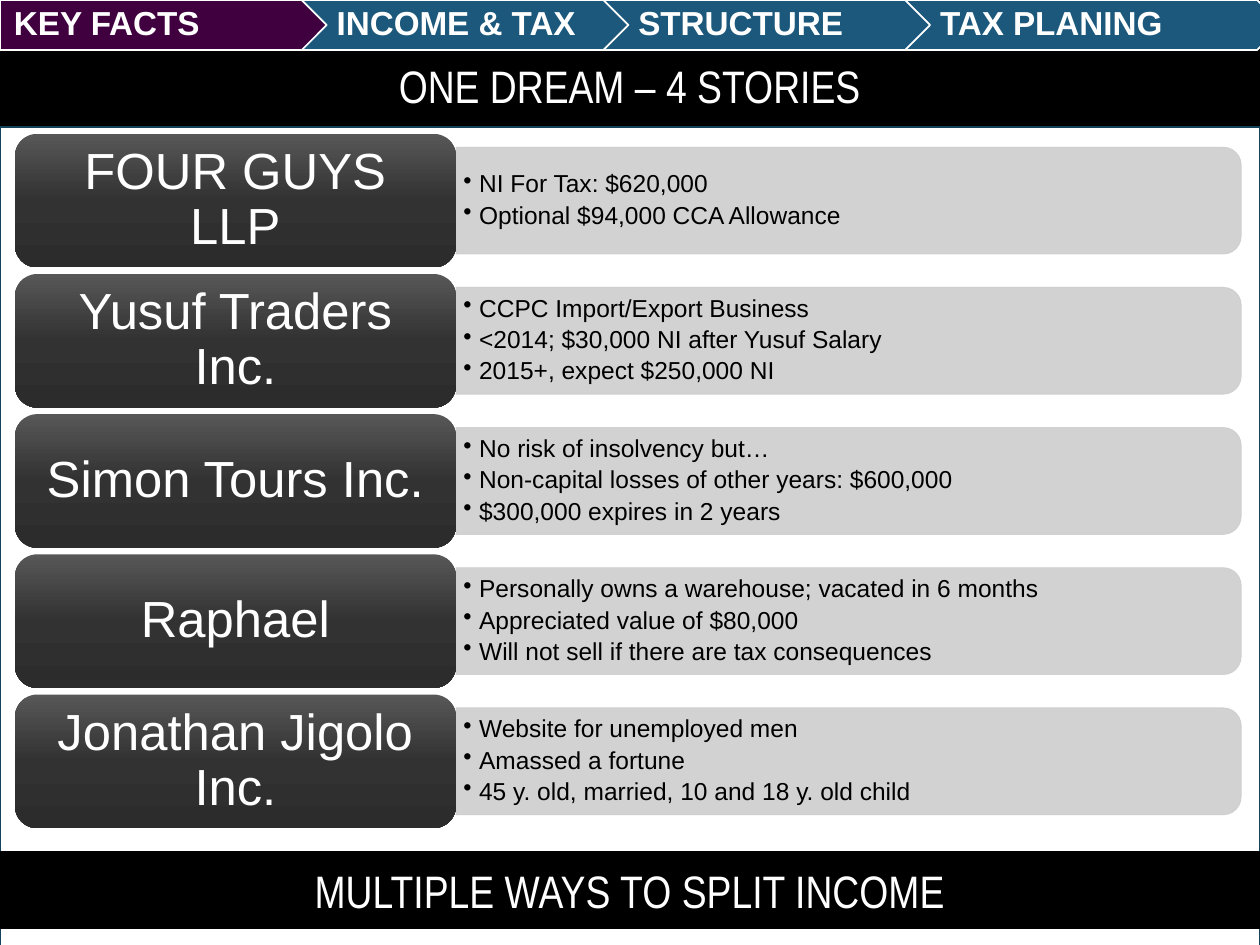
from lxml import etree
from pptx import Presentation
from pptx import util as u
from pptx.dml.color import RGBColor
from pptx.enum import shapes, text
from pptx.oxml.ns import qn

Pt = u.Pt
SHAPE = shapes.MSO_SHAPE
ALIGN = text.PP_ALIGN

WIDTH, HEIGHT = 720, 540
BLACK, WHITE = "000000", "FFFFFF"
PANEL_EDGE, BAR_GREY = "14415C", "CECECE"
NAV_ACTIVE, NAV_IDLE = "400040", "1B587C"
LABEL_GRADIENT = [(0, "575757"), (50, "323232"), (100, "2C2C2C")]

TABS = ["KEY FACTS", "INCOME & TAX", "STRUCTURE", "TAX PLANING"]
STORIES = [
    ("FOUR GUYS LLP",
     ["NI For Tax: $620,000", "Optional $94,000 CCA Allowance"]),
    ("Yusuf Traders Inc.",
     ["CCPC Import/Export Business", "<2014; $30,000 NI after Yusuf Salary",
      "2015+, expect $250,000 NI"]),
    ("Simon Tours Inc.",
     ["No risk of insolvency but…", "Non-capital losses of other years: $600,000",
      "$300,000 expires in 2 years"]),
    ("Raphael",
     ["Personally owns a warehouse; vacated in 6 months",
      "Appreciated value of $80,000", "Will not sell if there are tax consequences"]),
    ("Jonathan Jigolo Inc.",
     ["Website for unemployed men", "Amassed a fortune",
      "45 y. old, married, 10 and 18 y. old child"]),
]


def rgb(value):
    return RGBColor.from_string(value)


class SlideBuilder:
    body_font = "Arial"
    heading_font = "Arial Narrow"
    heading_size, label_size, tab_size, bullet_size = 26, 29, 19, 14

    def __init__(self, slide):
        self.slide = slide

    def put_text(self, shape, lines, size, color, font=None, align=ALIGN.LEFT,
                 bold=False, insets=(7.2, 3.6, 7.2, 3.6), spacing=0.9):
        frame = shape.text_frame
        frame.text = "\n".join(lines)
        frame.word_wrap = True
        frame.auto_size = text.MSO_AUTO_SIZE.NONE
        frame.vertical_anchor = text.MSO_ANCHOR.MIDDLE
        (frame.margin_left, frame.margin_top,
         frame.margin_right, frame.margin_bottom) = map(Pt, insets)
        for paragraph in frame.paragraphs:
            paragraph.alignment = align
            paragraph.line_spacing = spacing
            for run in paragraph.runs:
                run.font.size = Pt(size)
                run.font.name = font or self.body_font
                run.font.bold = bold
                run.font.color.rgb = rgb(color)

    def block(self, kind, left, top, width, height, fill=None, line=None, weight=1):
        shape = self.slide.shapes.add_shape(
            kind, Pt(left), Pt(top), Pt(width), Pt(height))
        shape.shadow.inherit = False
        if fill:
            shape.fill.solid()
            shape.fill.fore_color.rgb = rgb(fill)
        if line:
            shape.line.color.rgb = rgb(line)
            shape.line.width = Pt(weight)
        else:
            shape.line.fill.background()
        return shape

    def title(self, wording, left, top, width, height):
        title = self.slide.shapes.title
        title.left, title.top = Pt(left), Pt(top)
        title.width, title.height = Pt(width), Pt(height)
        self.put_text(title, [wording], self.heading_size, WHITE,
                      self.heading_font, ALIGN.CENTER)

    def backdrop(self, top, height, fill, line):
        """Place a full-width rectangle behind the title."""
        panel = self.block(SHAPE.RECTANGLE, 0, top, WIDTH, height, fill, line)
        self.slide.shapes.title.element.addprevious(panel.element)

    def footer(self, wording, top, height):
        band = self.block(SHAPE.RECTANGLE, 0, top, WIDTH, height, BLACK, BLACK)
        self.put_text(band, [wording], self.heading_size, WHITE,
                      self.heading_font, ALIGN.CENTER, spacing=1)

    def tab(self, wording, left, width, height, first):
        kind = SHAPE.PENTAGON if first else SHAPE.CHEVRON
        tab = self.block(kind, left, 0, width, height,
                         NAV_ACTIVE if first else NAV_IDLE, WHITE)
        self.put_text(tab, [wording], self.tab_size, WHITE, bold=True,
                      insets=(8 if first else 5.7, 4, 2, 4))

    def bar(self, left, middle, width, height):
        """Draw a translucent bar with its right-hand corners rounded."""
        bar = self.block(SHAPE.ROUND_2_SAME_RECTANGLE,
                         left + (width - height) / 2, middle - width / 2,
                         height, width, BAR_GREY, BAR_GREY, 0.5)
        bar.rotation = 90
        for color in bar.element.spPr.iter(qn("a:srgbClr")):
            etree.SubElement(color, qn("a:alpha"), val="90000")

    def label(self, wording, left, top, width, height):
        label = self.block(SHAPE.ROUNDED_RECTANGLE, left, top, width, height)
        label.fill.gradient()
        label.fill.gradient_angle = 270
        stops = label.element.spPr.find(".//" + qn("a:gsLst"))
        stops.clear()
        for position, color in LABEL_GRADIENT:
            stop = etree.SubElement(stops, qn("a:gs"), pos=str(position * 1000))
            etree.SubElement(stop, qn("a:srgbClr"), val=color)
        self.put_text(label, [wording], self.label_size, WHITE, align=ALIGN.CENTER,
                      insets=(8.7, 4.4, 8.7, 4.4))

    def bullets(self, lines, left, middle, width, height):
        box = self.slide.shapes.add_textbox(
            Pt(left), Pt(middle - height / 2), Pt(width), Pt(height))
        self.put_text(box, lines, self.bullet_size, BLACK,
                      insets=(4.2, 2.1, 4.2, 2.1))
        for paragraph in box.text_frame.paragraphs:
            paragraph.space_after = Pt(2.7)
            properties = paragraph._p.get_or_add_pPr()
            properties.set("marL", str(Pt(9)))
            properties.set("indent", str(-Pt(9)))
            etree.SubElement(properties, qn("a:buChar"), char="•")


def main():
    deck = Presentation()
    deck.slide_width, deck.slide_height = Pt(WIDTH), Pt(HEIGHT)
    builder = SlideBuilder(deck.slides.add_slide(deck.slide_layouts[5]))

    builder.backdrop(0, HEIGHT, BLACK, BLACK)
    builder.backdrop(72.6, 468, WHITE, PANEL_EDGE)
    builder.title("ONE DREAM – 4 STORIES", 49.7, 28.8, 620.6, 43.8)
    builder.footer("MULTIPLE WAYS TO SPLIT INCOME", 486.6, 44)

    label_left, label_width, label_height = 8.6, 252, 76.3
    first_top, row_pitch = 76.5, 80.1
    bar_left = label_left + label_width
    for row, (name, facts) in enumerate(STORIES):
        top = first_top + row * row_pitch
        middle = top + label_height / 2
        builder.bar(bar_left, middle, 448.6, 61)
        builder.bullets(facts, bar_left, middle, 445.6, 55)
        builder.label(name, label_left, top, label_width, label_height)

    for index, wording in enumerate(TABS):
        builder.tab(wording, index * 172.4, 215.4, 28.6, first=index == 0)

    deck.save("out.pptx")


if __name__ == "__main__":
    main()
